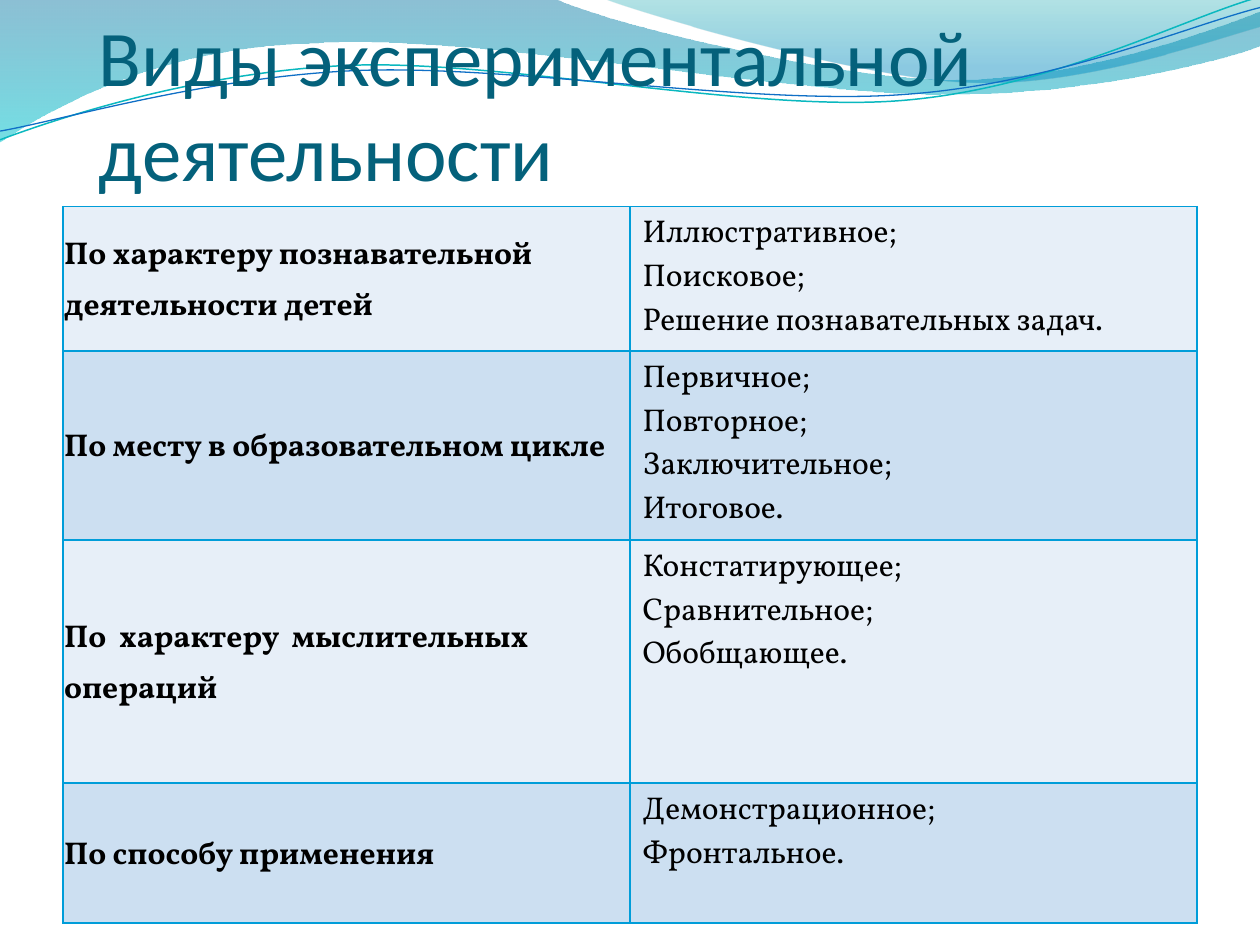
from lxml import etree
from pptx import Presentation
from pptx import util as u
from pptx.dml.color import RGBColor
from pptx.enum import text
from pptx.oxml import ns

COLORS = {
    "title": "04617B", "ink": "000000", "border": "009DD9",
    "light": "E7EFF8", "dark": "CCDFF1",
    "deep": "0074A1", "cyan": "00C6CF", "teal": "00A1A9", "sky": "008BBF",
    "teal_line": "0AB8BF", "blue_line": "0F6FC6",
}

WAVES = [
    {"start": (0, 0),
     "segments": [(317, -0.7),
                  (342.7, 12.2, 478.1, 45.4, 545.8, 45.4),
                  (614.2, 45.4, 689.8, 18.7, 720, 6.5),
                  (720.7, 25.9),
                  (707.8, 31.7, 626.4, 54.7, 537.1, 54),
                  (447.8, 54, 275, 20.2, 185, 24.5),
                  (92.9, 25.9, 33.1, 59.8, -0.7, 81.4),
                  (0, 0)],
     "stops": [(0, "deep", 45), (1, "cyan", 55)]},
    {"start": (344.9, -0.7),
     "segments": [(366.5, 7.9, 491, 44.6, 553.7, 46.8),
                  (616.3, 49.7, 691.9, 23, 720, 15.1),
                  (720, 0),
                  (344.9, -0.7)],
     "stops": [(0, "teal", 30), (0.8, "sky", 45)]},
]

LINES = [
    {"start": (0, 79.9), "ink": "teal_line", "width": 0.85,
     "segments": [(34.6, 67, 113.8, 41, 199.4, 37.4),
                  (284.4, 33.8, 427, 64.1, 513.4, 57.6),
                  (599.8, 51.1, 675.4, 10.8, 718.6, -1.4)]},
    {"start": (0, 74.9), "ink": "blue_line", "width": 0.75,
     "segments": [(33.8, 69.1, 118.1, 43.9, 203.8, 40.3),
                  (290.2, 36.7, 429.8, 60.5, 516.2, 54),
                  (601.9, 48.2, 677.5, 15.1, 720, 4.3)]},
]

ROWS = [
    (82.5, 4.6, "По характеру познавательной деятельности детей",
     ["Иллюстративное;", "Поисковое;", "Решение познавательных задач."]),
    (108, 10, "По месту в образовательном цикле",
     ["Первичное;", "Повторное;", "Заключительное;", "Итоговое."]),
    (139, 10, "По  характеру  мыслительных операций",
     ["Констатирующее;", "Сравнительное;", "Обобщающее."]),
    (80, 10, "По способу применения",
     ["Демонстрационное;", "Фронтальное."]),
]


def color(name):
    return RGBColor.from_string(COLORS[name])


def apply(target, values):
    for name, value in values.items():
        setattr(target, name, value)


def margins(left, top, right, bottom):
    sides = ("left", "top", "right", "bottom")
    return {f"margin_{side}": u.Pt(value)
            for side, value in zip(sides, (left, top, right, bottom))}


class SlideBuilder:
    title_font = {"name": "Calibri", "size": u.Pt(45), "bold": False}
    label_font = {"name": "Vollkorn", "size": u.Pt(18), "bold": True}
    item_font = {**label_font, "bold": False}

    def __init__(self, slide):
        self.slide = slide

    def outline(self, start, segments, close):
        builder = self.slide.shapes.build_freeform(*map(u.Pt, start))
        ends = [tuple(map(u.Pt, segment[-2:])) for segment in segments]
        builder.add_line_segments(ends, close=close)
        shape = builder.convert_to_shape()
        shape.shadow.inherit = False
        steps = list(shape.element.spPr.iter(ns.qn("a:lnTo")))
        for step, segment in zip(steps, segments):
            if len(segment) == 6:
                step.tag = ns.qn("a:cubicBezTo")
                for index in (0, 1):
                    x, y = map(u.Pt, segment[2 * index:2 * index + 2])
                    handle = etree.Element(ns.qn("a:pt"), x=str(x - shape.left),
                                           y=str(y - shape.top))
                    step.insert(index, handle)
        return shape

    def wave(self, start, segments, stops):
        shape = self.outline(start, segments, True)
        shape.line.fill.background()
        shape.fill.gradient()
        shape.fill.gradient_angle = 270
        for stop, (position, name, _) in zip(shape.fill.gradient_stops, stops):
            stop.position = position
            stop.color.rgb = color(name)
        tones = shape.element.spPr.iter(ns.qn("a:srgbClr"))
        for tone, (_, _, opacity) in zip(list(tones), stops):
            etree.SubElement(tone, ns.qn("a:alpha"), val=str(opacity * 1000))

    def curve(self, start, segments, ink, width):
        shape = self.outline(start, segments, False)
        shape.fill.background()
        shape.line.color.rgb = color(ink)
        shape.line.width = u.Pt(width)

    def paragraph(self, paragraph, words, font, ink, spacing=None):
        apply(paragraph, {"alignment": text.PP_ALIGN.LEFT, **(spacing or {})})
        run = paragraph.add_run()
        run.text = words
        apply(run.font, font)
        run.font.color.rgb = color(ink)

    def title(self, words, left, top, width, height):
        box = self.slide.shapes.add_textbox(*map(u.Pt, (left, top, width, height)))
        apply(box.text_frame, {"word_wrap": True, "vertical_anchor": text.MSO_ANCHOR.BOTTOM,
                               **margins(0, 3.6, 0, 0)})
        self.paragraph(box.text_frame.paragraphs[0], words, self.title_font, "title")

    def cell(self, cell, lines, font, fill, layout, spacing=None):
        apply(cell, layout)
        cell.fill.solid()
        cell.fill.fore_color.rgb = color(fill)
        frame = cell.text_frame
        for index, words in enumerate(lines):
            paragraph = frame.add_paragraph() if index else frame.paragraphs[0]
            self.paragraph(paragraph, words, font, "ink", spacing)
        properties = cell._tc.get_or_add_tcPr()
        for index, side in enumerate(("lnL", "lnR", "lnT", "lnB")):
            border = etree.Element(ns.qn(f"a:{side}"), w=str(u.Pt(1)))
            solid = etree.SubElement(border, ns.qn("a:solidFill"))
            etree.SubElement(solid, ns.qn("a:srgbClr"), val=COLORS["border"])
            properties.insert(index, border)

    def table(self, rows, left, top, width):
        height = sum(row[0] for row in rows)
        frame = self.slide.shapes.add_table(len(rows), 2, *map(u.Pt, (left, top, width, height)))
        table = frame.table
        apply(table, {"first_row": False, "horz_banding": False})
        label_layout = {"vertical_anchor": text.MSO_ANCHOR.MIDDLE, **margins(0.7, 0.7, 0.7, 0.7)}
        item_layout = {"vertical_anchor": text.MSO_ANCHOR.TOP, **margins(7.2, 3.6, 7.2, 3.6)}
        for index, (row_height, space_after, label, items) in enumerate(rows):
            table.rows[index].height = u.Pt(row_height)
            fill = ("light", "dark")[index % 2]
            spacing = {"line_spacing": 1.15, "space_after": u.Pt(space_after)}
            self.cell(table.cell(index, 0), [label], self.label_font, fill, label_layout, spacing)
            self.cell(table.cell(index, 1), items, self.item_font, fill, item_layout)


def main():
    presentation = Presentation()
    apply(presentation, {"slide_width": u.Pt(720), "slide_height": u.Pt(540)})
    builder = SlideBuilder(presentation.slides.add_slide(presentation.slide_layouts[6]))
    for wave in WAVES:
        builder.wave(**wave)
    for line in LINES:
        builder.curve(**line)
    builder.title("Виды экспериментальной деятельности", 56.5, 22.5, 648, 90)
    builder.table(ROWS, 36, 118, 648)
    presentation.save("out.pptx")


if __name__ == "__main__":
    main()
